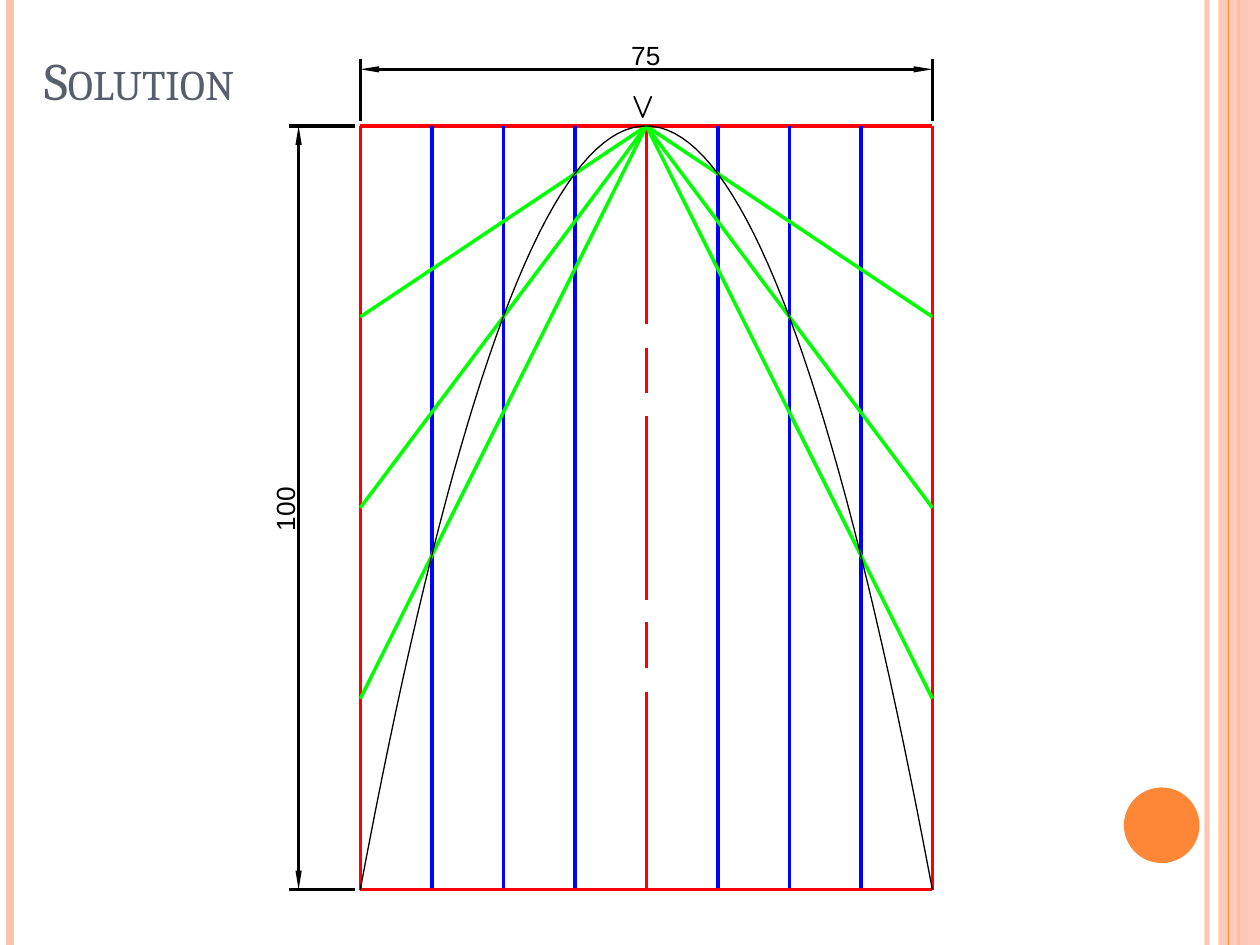
import dataclasses
import lxml.etree
import pptx
import pptx.dml.color
import pptx.enum.shapes
import pptx.enum.text
import pptx.oxml.ns
import pptx.util

Inches = pptx.util.Inches
Pt = pptx.util.Pt
Shape = pptx.enum.shapes.MSO_SHAPE
Fit = pptx.enum.text.MSO_AUTO_SIZE
qn = pptx.oxml.ns.qn


@dataclasses.dataclass(frozen=True)
class Theme:
    orange: str = "FE8637"
    peach: str = "FEC3AE"
    slate: str = "575F6D"
    black: str = "000000"
    red: str = "FF0000"
    green: str = "00FF00"
    blue: str = "0000FF"
    title_font: str = "Cambria"
    size_font: str = "Arial"
    mark_font: str = "Quicksand"
    title_size: int = 30
    size_size: int = 15
    mark_size: int = 18


def paint(fill, color, alpha=100):
    """Give a solid fill its colour and its opacity in percent."""
    fill.solid()
    fill.fore_color.rgb = pptx.dml.color.RGBColor.from_string(color)
    if alpha < 100:
        node = next(fill._xPr.iter(qn("a:srgbClr")))
        lxml.etree.SubElement(node, qn("a:alpha"), val=str(alpha * 1000))


class Sheet:
    """Draws styled elements on one slide, with lengths in inches."""

    def __init__(self, slide, theme):
        self.slide = slide
        self.shapes = slide.shapes
        self.theme = theme

    def style(self, para, text, font, size, color):
        para.text = text
        para.font.name = font
        para.font.size = Pt(size)
        para.font.color.rgb = pptx.dml.color.RGBColor.from_string(color)

    def title(self, text, left, top, width, height):
        box = self.shapes.title
        box.left, box.top = Inches(left), Inches(top)
        box.width, box.height = Inches(width), Inches(height)
        frame = box.text_frame
        frame.auto_size = Fit.NONE
        frame.vertical_anchor = pptx.enum.text.MSO_ANCHOR.BOTTOM
        para = frame.paragraphs[0]
        self.style(para, text, self.theme.title_font,
                   self.theme.title_size, self.theme.slate)
        para.alignment = pptx.enum.text.PP_ALIGN.LEFT
        para.runs[0].font._element.set("cap", "small")

    def line(self, start, end, color, width=0, alpha=100):
        line = self.shapes.add_connector(
            pptx.enum.shapes.MSO_CONNECTOR.STRAIGHT,
            *(Inches(n) for n in (*start, *end)))
        paint(line.line.fill, color, alpha)
        line.line.width = Pt(width)
        lxml.etree.SubElement(line._element.spPr, qn("a:effectLst"))

    def chain(self, points, color):
        """Draw straight lines from each point to the next."""
        for start, end in zip(points, points[1:]):
            self.line(start, end, color)

    def solid(self, kind, left, top, width, height, color, alpha=100):
        shape = self.shapes.add_shape(
            kind, *(Inches(n) for n in (left, top, width, height)))
        paint(shape.fill, color, alpha)
        shape.line.fill.background()
        shape.shadow.inherit = False

    def outline(self, points, color, filled=False):
        """Draw a filled closed shape or a bare open curve."""
        spots = [(Inches(x), Inches(y)) for x, y in points]
        build = self.shapes.build_freeform(*spots[0])
        build.add_line_segments(spots[1:], close=filled)
        shape = build.convert_to_shape()
        shape.shadow.inherit = False
        if filled:
            paint(shape.fill, color)
            shape.line.fill.background()
        else:
            shape.fill.background()
            paint(shape.line.fill, color)
            shape.line.width = Pt(0)

    def arrow(self, x, y, dx, dy):
        """Fill an arrowhead with its tip at x, y, its base towards dx, dy."""
        long, half = 0.15, 0.025
        base = x + dx * long, y + dy * long
        side = dy * half, dx * half
        self.outline([(base[0] - side[0], base[1] - side[1]),
                      (base[0] + side[0], base[1] + side[1]), (x, y)],
                     self.theme.black, filled=True)

    def label(self, text, left, top, width, height, font, size,
              turn=0, inset=None):
        box = self.shapes.add_textbox(
            *(Inches(n) for n in (left, top, width, height)))
        box.rotation = turn
        frame = box.text_frame
        frame.word_wrap = inset is None
        frame.auto_size = Fit.SHAPE_TO_FIT_TEXT
        if inset is not None:
            frame.margin_left = frame.margin_right = Inches(inset)
            frame.margin_top = frame.margin_bottom = Inches(inset)
        self.style(frame.paragraphs[0], text, font, size, self.theme.black)


def trim(sheet):
    theme = sheet.theme
    for x, color, width, alpha in ((9.58, theme.peach, 3, 93),
                                   (0.08, theme.peach, 4.5, 100),
                                   (9.83, theme.orange, 1.5, 100)):
        sheet.line((x, 0), (x, 7.5), color, width, alpha)
    sheet.solid(Shape.RECTANGLE, 9.67, 0, 0.33, 7.5, theme.peach, 87)
    sheet.line((9.75, 0), (9.75, 7.5), theme.orange, 0.75)
    sheet.solid(Shape.OVAL, 8.92, 6.25, 0.6, 0.6, theme.orange)


def curve(sheet, left, top, right, bottom):
    """Draw a parabola in its box by the rectangle method."""
    theme = sheet.theme
    mid, half, high = (left + right) / 2, (right - left) / 2, bottom - top
    cols = [left + half * n / 4 for n in range(9)]
    rows = [top + high * n / 4 for n in range(5)]

    sheet.line((right, top), (left, top), theme.red)
    for start, end in ((top, 2.57), (2.76, 3.12), (3.3, 4.76),
                       (4.94, 5.3), (5.49, bottom)):
        sheet.line((mid, start), (mid, end), theme.red)
    for x in cols[1:4] + cols[5:8]:
        sheet.line((x, bottom), (x, top), theme.blue)
    sheet.chain([(x, bottom) for x in cols[::2]], theme.red)
    for x in (left, right):
        sheet.chain([(x, y) for y in rows], theme.red)
        for y in rows[1:4]:
            sheet.line((mid, top), (x, y), theme.green)

    steps = [n / 40 for n in range(-40, 41)]
    sheet.outline([(mid + half * t, top + high * t * t) for t in steps],
                  theme.black)


def sizes(sheet, left, top, right, bottom):
    """Add the height and width dimensions and the vertex mark."""
    theme = sheet.theme
    rail, beam, head = 2.37, 0.55, 0.15
    for y in (top, bottom):
        sheet.line((left - 0.04, y), (2.29, y), theme.black)
    sheet.line((rail, top + head), (rail, bottom - head), theme.black)
    sheet.arrow(rail, top, 0, 1)
    sheet.arrow(rail, bottom, 0, -1)
    sheet.label("100", 2.05, 3.83, 0.47, 0.3, theme.size_font,
                theme.size_size, turn=270, inset=0)

    for x in (left, right):
        sheet.line((x, top - 0.04), (x, 0.47), theme.black)
    sheet.line((left + head, beam), (right - head, beam), theme.black)
    sheet.arrow(left, beam, 1, 0)
    sheet.arrow(right, beam, -1, 0)
    sheet.label("75", 5.01, 0.31, 0.35, 0.3, theme.size_font,
                theme.size_size, inset=0)
    sheet.label("V", 4.92, 0.64, 0.27, 0.4, theme.mark_font, theme.mark_size)


def main():
    deck = pptx.Presentation()
    deck.slide_width, deck.slide_height = Inches(10), Inches(7.5)
    sheet = Sheet(deck.slides.add_slide(deck.slide_layouts[5]), Theme())
    frame = 2.86, 1, 7.4, 7.06
    trim(sheet)
    sheet.title("Solution", 0.25, 0.21, 8.17, 0.72)
    curve(sheet, *frame)
    sizes(sheet, *frame)
    deck.save("out.pptx")


if __name__ == "__main__":
    main()
